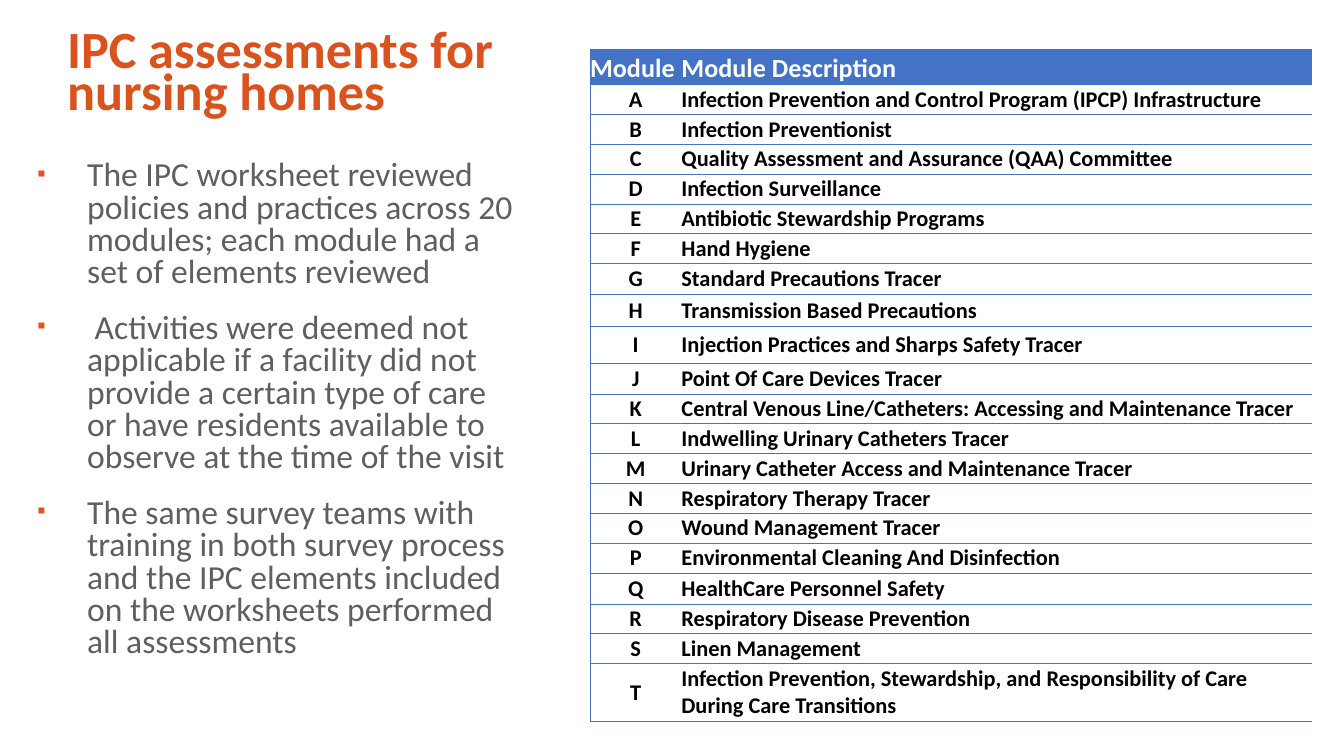
from lxml import etree
from pptx import Presentation
from pptx.dml.color import RGBColor
from pptx.enum import text as t
from pptx.oxml import ns
from pptx.util import Inches, Pt

RUST = RGBColor(0xD9, 0x53, 0x1E)
EMBER = RGBColor(0xE2, 0x54, 0x23)
GRAY = RGBColor(0x5F, 0x5F, 0x5F)
BLUE = RGBColor(0x44, 0x72, 0xC4)
WHITE = RGBColor(0xFF, 0xFF, 0xFF)
BLACK = RGBColor(0, 0, 0)
FONT = "Calibri"
PLAIN = "{2D5ABB26-0587-4C30-8999-92F81FD0307C}"

POINTS = [
    "The IPC worksheet reviewed policies and practices across 20 modules; "
    "each module had a set of elements reviewed",
    " Activities were deemed not applicable if a facility did not provide a "
    "certain type of care or have residents available to observe at the time "
    "of the visit",
    "The same survey teams with training in both survey process and the IPC "
    "elements included on the worksheets performed all assessments",
]
HEADS = ("Module", "Module Description")
MODULES = [
    "Infection Prevention and Control Program (IPCP) Infrastructure",
    "Infection Preventionist",
    "Quality Assessment and Assurance (QAA) Committee",
    "Infection Surveillance",
    "Antibiotic Stewardship Programs",
    "Hand Hygiene",
    "Standard Precautions Tracer",
    "Transmission Based Precautions",
    "Injection Practices and Sharps Safety Tracer",
    "Point Of Care Devices Tracer",
    "Central Venous Line/Catheters: Accessing and Maintenance Tracer",
    "Indwelling Urinary Catheters Tracer",
    "Urinary Catheter Access and Maintenance Tracer",
    "Respiratory Therapy Tracer",
    "Wound Management Tracer",
    "Environmental Cleaning And Disinfection",
    "HealthCare Personnel Safety",
    "Respiratory Disease Prevention",
    "Linen Management",
    "Infection Prevention, Stewardship, and Responsibility of Care "
    "During Care Transitions",
]
COLS = (0.68, 4.69)
ROW = Pt(16)
TALL = {0: 0.26, 7: 0.23, 8: 0.24, 9: 0.27, 10: 0.23, 17: 0.23, 20: 0.43}


def add(parent, tag, **attrs):
    return etree.SubElement(parent, ns.qn(tag), attrs)


def write(para, words, size, color, bold=False, align=None, space=None,
          before=None, after=None):
    para.alignment = align
    para.line_spacing = space
    para.space_before = before
    para.space_after = after
    run = para.add_run()
    run.text = words
    font = run.font
    font.name, font.size, font.bold = FONT, Pt(size), bold
    font.color.rgb = color


def text_box(slide, box):
    frame = slide.shapes.add_textbox(*map(Inches, box)).text_frame
    frame.word_wrap = True
    return frame


def add_title(slide, box):
    frame = text_box(slide, box)
    frame.vertical_anchor = t.MSO_ANCHOR.BOTTOM
    frame.margin_left = frame.margin_right = Inches(0.07)
    frame.margin_top = frame.margin_bottom = Inches(0.04)
    write(frame.paragraphs[0], "IPC assessments for nursing homes", 28, RUST,
          bold=True, space=Pt(22.5))


def add_bullet(para):
    props = para._p.get_or_add_pPr()
    props.set("marL", str(Inches(0.38)))
    props.set("indent", str(Inches(-0.37)))
    add(add(props, "a:buClr"), "a:srgbClr", val=str(EMBER))
    add(props, "a:buSzPct", val="70000")
    add(props, "a:buFont", typeface=FONT)
    add(props, "a:buChar", char="▪")


def add_points(slide, box):
    frame = text_box(slide, box)
    for i, words in enumerate(POINTS):
        para = frame.add_paragraph() if i else frame.paragraphs[0]
        add_bullet(para)
        write(para, words, 18, GRAY, space=0.8,
              before=Pt(3.6) if i else None, after=Pt(9))


def add_edges(cell, sides):
    """Rule the given sides; must run before the cell is filled."""
    props = cell._tc.get_or_add_tcPr()
    for side in sides:
        line = add(props, f"a:ln{side}", w=str(Pt(0.5)))
        add(add(line, "a:solidFill"), "a:srgbClr", val=str(BLUE))


def add_modules(slide, box):
    rows = [HEADS] + [(chr(ord("A") + i), name)
                      for i, name in enumerate(MODULES)]
    frame = slide.shapes.add_table(len(rows), len(COLS), *map(Inches, box))
    table = frame.table
    table.horz_banding = False
    table._tbl.tblPr.find(ns.qn("a:tableStyleId")).text = PLAIN
    for col, width in zip(table.columns, COLS):
        col.width = Inches(width)
    for r, row in enumerate(rows):
        table.rows[r].height = Inches(TALL[r]) if r in TALL else ROW
        for c, words in enumerate(row):
            cell = table.cell(r, c)
            add_edges(cell, "TB" if c else "LTB")
            cell.margin_left = cell.margin_right = 0
            cell.margin_top = cell.margin_bottom = 0
            para = cell.text_frame.paragraphs[0]
            if r == 0:
                cell.fill.solid()
                cell.fill.fore_color.rgb = BLUE
                cell.vertical_anchor = t.MSO_ANCHOR.BOTTOM
                write(para, words, 14, WHITE, bold=True)
            else:
                cell.fill.background()
                cell.vertical_anchor = t.MSO_ANCHOR.MIDDLE
                write(para, words, 12, BLACK, bold=True,
                      align=None if c else t.PP_ALIGN.CENTER)


def main():
    deck = Presentation()
    deck.slide_width = Inches(10)
    deck.slide_height = deck.slide_width * 9 // 16
    slide = deck.slides.add_slide(deck.slide_layouts[6])
    add_title(slide, (0.43, 0.24, 3.96, 0.7))
    add_modules(slide, (4.39, 0.37, 5.36, 5))
    add_points(slide, (0.17, 1.15, 3.79, 3.87))
    deck.save("out.pptx")


if __name__ == "__main__":
    main()
